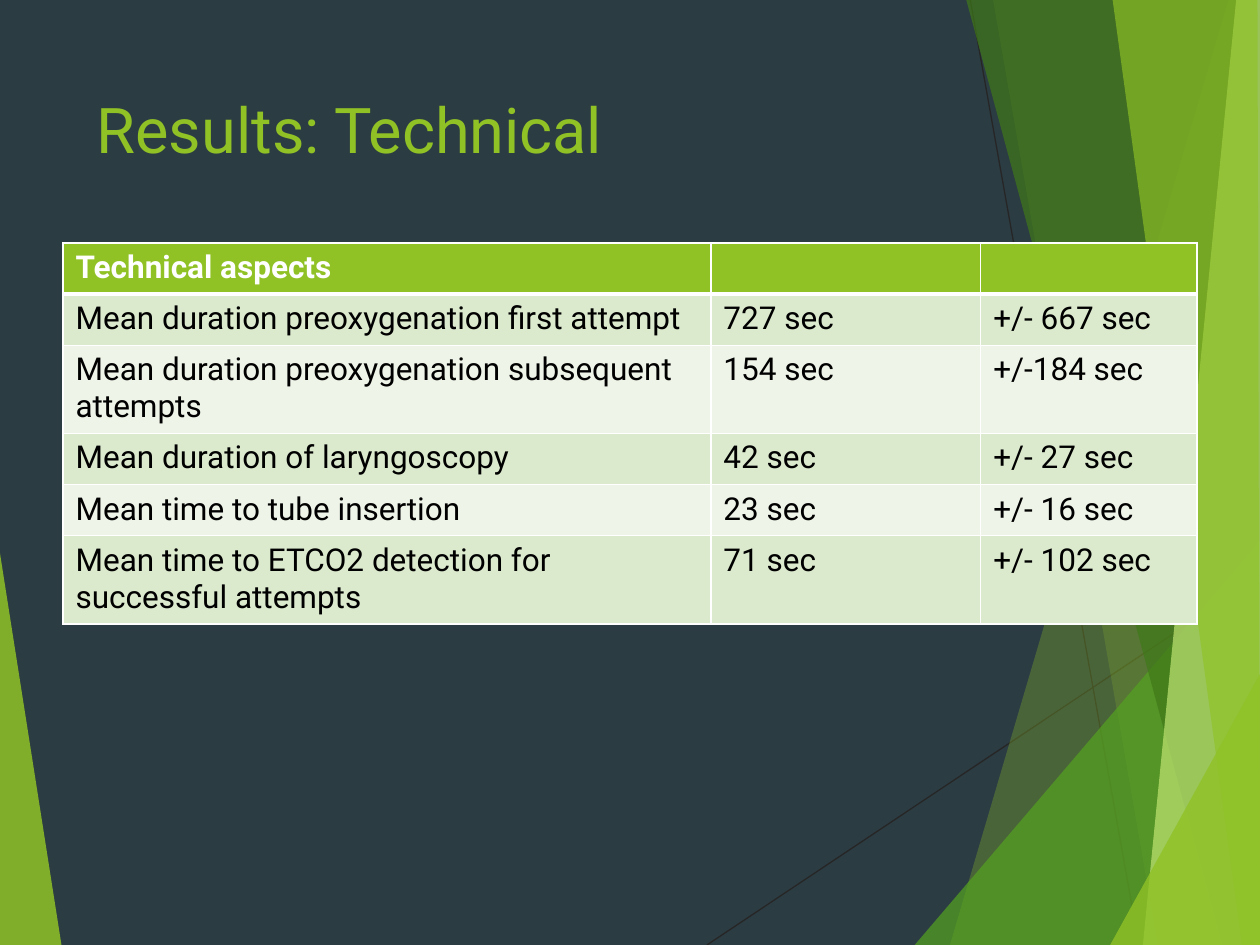
"""Build the slide on technical results: faceted backdrop, title and table."""
import typing

import lxml.etree
import pptx
import pptx.dml.color
import pptx.enum.shapes
import pptx.enum.text
import pptx.oxml.ns
import pptx.util

Cm = pptx.util.Cm
WIDE, HIGH = 25.4, 19.05
LIME, PALE, MIST = "90C226", "DBE9CD", "EEF4E8"
WHITE, BLACK = "FFFFFF", "000000"


class Ray(typing.NamedTuple):
    start: tuple[float, float]
    end: tuple[float, float]


class Facet(typing.NamedTuple):
    points: list[tuple[float, float]]
    color: str
    alpha: int


def band(top: float, foot: float, color: str, alpha: int, edge: float = WIDE) -> Facet:
    return Facet([(top, 0), (foot, HIGH), (WIDE, HIGH), (edge, 0)], color, alpha)


def wedge(foot: float, peak: float, color: str, alpha: int, side: float = WIDE) -> Facet:
    return Facet([(foot, HIGH), (side, peak), (side, HIGH)], color, alpha)


RAYS = [Ray((14.25, HIGH), (WIDE, 11.61)), Ray((19.56, 0), (22.96, HIGH))]
FACETS = [
    wedge(1.24, 11.15, LIME, 85, side=0),
    band(24.77, 19.15, LIME, 30),
    band(20.02, 23.34, LIME, 20),
    wedge(18.44, 10.9, "54A021", 72),
    band(19.48, 24.64, "3F7819", 70),
    band(24.92, 23.04, "C0E474", 70),
    band(22.43, 25.04, LIME, 65, edge=25.35),
    wedge(22.38, 13.59, LIME, 80),
]
COLS = [13.06, 5.44, 4.36]
ROWS = [
    ("Technical aspects", "", ""),
    ("Mean duration preoxygenation first attempt", "727 sec", "+/- 667 sec"),
    ("Mean duration preoxygenation subsequent attempts", "154 sec", "+/-184 sec"),
    ("Mean duration of laryngoscopy", "42 sec", "+/- 27 sec"),
    ("Mean time to tube insertion", "23 sec", "+/- 16 sec"),
    ("Mean time to ETCO2 detection for successful attempts", "71 sec", "+/- 102 sec"),
]


def rgb(color: str) -> pptx.dml.color.RGBColor:
    return pptx.dml.color.RGBColor.from_string(color)


def sub(node, tag: str, **attrs: str):
    return lxml.etree.SubElement(node, pptx.oxml.ns.qn(tag), **attrs)


def paint(fill, color: str) -> None:
    fill.solid()
    fill.fore_color.rgb = rgb(color)


def write(frame, text: str, size: int = 18, color: str = BLACK, bold: bool = False) -> None:
    run = frame.paragraphs[0].add_run()
    run.text = text
    run.font.name = "Roboto"
    run.font.size = pptx.util.Pt(size)
    run.font.bold = bold
    run.font.color.rgb = rgb(color)


def draw_ray(slide, ray: Ray) -> None:
    kind = pptx.enum.shapes.MSO_CONNECTOR.STRAIGHT
    line = slide.shapes.add_connector(kind, *map(Cm, ray.start + ray.end))
    line.line.color.rgb = rgb("262626")
    line.line.width = pptx.util.Pt(0.75)
    sub(line._element.spPr, "a:effectLst")


def draw_facet(slide, facet: Facet) -> None:
    first, *rest = [(Cm(x), Cm(y)) for x, y in facet.points]
    pen = slide.shapes.build_freeform(*first)
    pen.add_line_segments(rest, close=True)
    shape = pen.convert_to_shape()
    shape.shadow.inherit = False
    shape.line.fill.background()
    paint(shape.fill, facet.color)
    tint = shape._element.spPr.find(".//" + pptx.oxml.ns.qn("a:srgbClr"))
    sub(tint, "a:alpha", val=str(facet.alpha * 1000))


def edge(cell, foot: int) -> None:
    props = cell._tc.get_or_add_tcPr()
    for side, width in zip("LRTB", (1, 1, 1, foot)):
        line = sub(props, f"a:ln{side}", w=str(pptx.util.Pt(width)))
        sub(sub(line, "a:solidFill"), "a:srgbClr", val=WHITE)


def draw_table(slide, rows: list[tuple[str, str, str]]) -> None:
    tall = Cm(1.03)
    table = slide.shapes.add_table(
        len(rows), len(COLS), Cm(1.27), Cm(4.9), Cm(sum(COLS)), tall * len(rows)
    ).table
    for col, width in zip(table.columns, COLS):
        col.width = Cm(width)
    for i, texts in enumerate(rows):
        head = i == 0
        table.rows[i].height = tall
        for j, text in enumerate(texts):
            cell = table.cell(i, j)
            edge(cell, 3 if head else 1)
            paint(cell.fill, LIME if head else PALE if i % 2 else MIST)
            write(cell.text_frame, text, color=WHITE if head else BLACK, bold=head)


def main() -> None:
    deck = pptx.Presentation()
    deck.slide_width, deck.slide_height = Cm(WIDE), Cm(HIGH)
    slide = deck.slides.add_slide(deck.slide_layouts[6])
    paint(slide.background.fill, "2C3C43")
    for ray in RAYS:
        draw_ray(slide, ray)
    for facet in FACETS:
        draw_facet(slide, facet)
    title = slide.shapes.add_textbox(Cm(1.7), Cm(1.7), Cm(17.63), Cm(3.66)).text_frame
    title.word_wrap = True
    title.vertical_anchor = pptx.enum.text.MSO_ANCHOR.TOP
    write(title, "Results: Technical", size=36, color=LIME)
    draw_table(slide, ROWS)
    deck.save("out.pptx")


if __name__ == "__main__":
    main()
